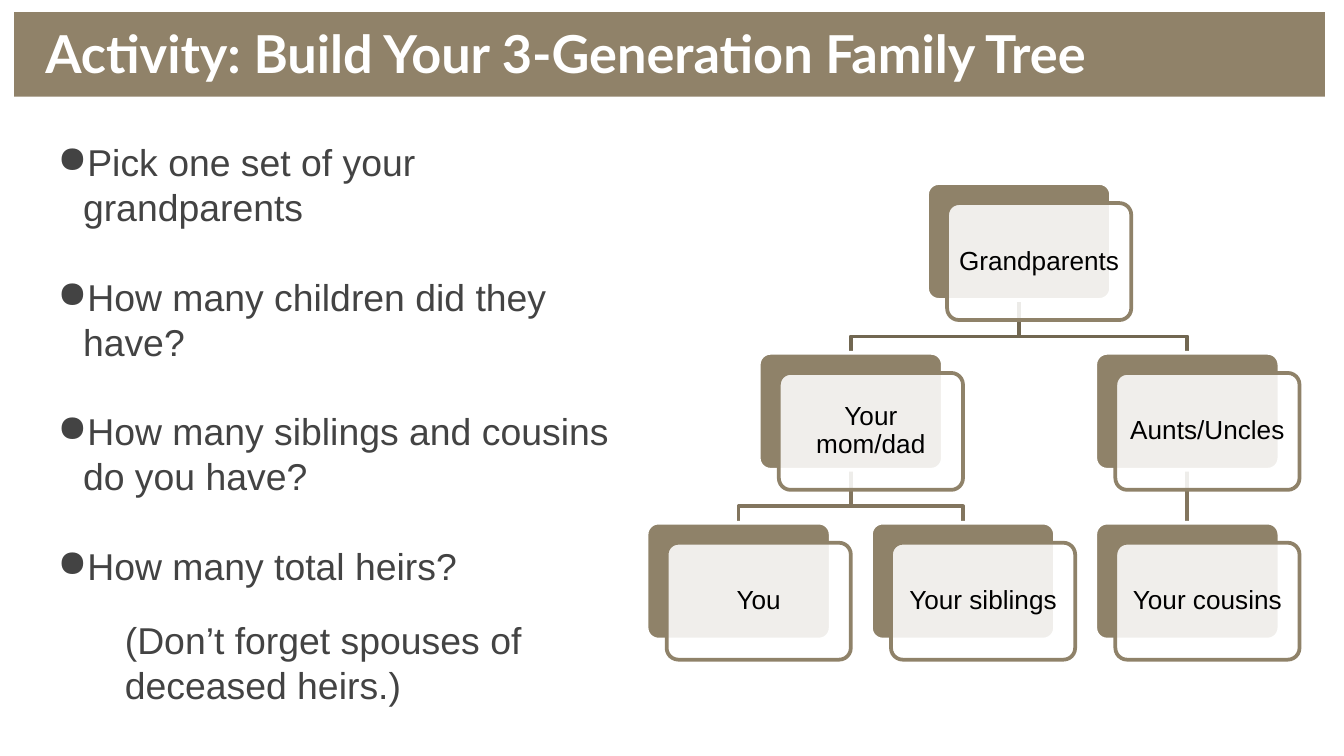
from pptx import Presentation
from pptx.dml.color import RGBColor
from pptx.enum.shapes import MSO_SHAPE as SHAPE
from pptx.enum.text import MSO_ANCHOR as ANCHOR, PP_ALIGN as ALIGN
from pptx.oxml.ns import qn
from pptx.util import Cm, Pt
from lxml.etree import SubElement

TAUPE = RGBColor(0x8F, 0x82, 0x69)
BANNER = RGBColor(0x90, 0x82, 0x69)
UPPER_BRANCH = RGBColor(0x71, 0x67, 0x51)
LOWER_BRANCH = RGBColor(0x82, 0x75, 0x5E)
WHITE = RGBColor(0xFF, 0xFF, 0xFF)
BLACK = RGBColor(0, 0, 0)
GREY = RGBColor(0x43, 0x43, 0x43)

CARD_W, CARD_H = 3.48, 2.21
COLUMN_STEP, ROW_STEP = 4.24, 3.21
TREE_LEFT, TREE_TOP = 12.22, 3.46
OFFSET = 0.38
BEND = 0.69


def set_font(paragraph, name, size, color, bold=False):
    font = paragraph.font
    font.name, font.size, font.bold = name, Pt(size), bold
    font.color.rgb = color


def add_card(left, top, fill, line):
    card = slide.shapes.add_shape(
        SHAPE.ROUNDED_RECTANGLE, Cm(left), Cm(top), Cm(CARD_W), Cm(CARD_H))
    card.adjustments[0] = 0.1
    card.shadow.inherit = False
    card.fill.solid()
    card.fill.fore_color.rgb = fill
    card.line.color.rgb = line
    card.line.width = Pt(2)
    return card


prs = Presentation()
prs.slide_width, prs.slide_height = Cm(25.4), Cm(14.29)
slide = prs.slides.add_slide(prs.slide_layouts[6])

banner = slide.shapes.add_shape(SHAPE.RECTANGLE, Cm(0.27), Cm(0.23), Cm(24.77), Cm(1.6))
banner.shadow.inherit = False
banner.fill.solid()
banner.fill.fore_color.rgb = BANNER
banner.line.fill.background()
title = banner.text_frame
title.vertical_anchor = ANCHOR.BOTTOM
title.margin_left = Cm(0.59)
title.margin_right = title.margin_top = title.margin_bottom = Cm(0.25)
heading = title.paragraphs[0]
heading.text = "Activity: Build Your 3-Generation Family Tree"
heading.alignment = ALIGN.LEFT
set_font(heading, "Lato", 28, WHITE, True)

questions = slide.shapes.add_textbox(Cm(0.84), Cm(2.39), Cm(11.38), Cm(10.67)).text_frame
questions.word_wrap = True
questions.margin_left = questions.margin_right = Cm(0.25)
questions.margin_top = questions.margin_bottom = Cm(0.25)
steps = [
    ("Pick one set of your grandparents", 0, 0),
    ("How many children did they have?", 0, 24),
    ("How many siblings and cousins do you have?", 0, 24),
    ("How many total heirs?", 0, 24),
    ("(Don’t forget spouses of deceased heirs.)", 1, 16),
]
for i, (wording, level, gap) in enumerate(steps):
    step = questions.add_paragraph() if i else questions.paragraphs[0]
    step.text = wording
    step.level = level
    step.line_spacing = Pt(24)
    step.space_before = Pt(gap)
    indents = step._p.get_or_add_pPr()
    indents.set("marL", str(Cm(1.27 if level else 0.48)))
    indents.set("indent", str(Cm(0 if level else -0.48)))
    if level == 0:
        bullet_color = SubElement(indents, qn("a:buClr"))
        SubElement(bullet_color, qn("a:srgbClr"), val=str(GREY))
        SubElement(indents, qn("a:buChar"), char="●")
    set_font(step, "Arial", 20, GREY)

relatives = {
    "Grandparents": (1.25, 0, None),
    "Your mom/dad": (0.5, 1, "Grandparents"),
    "You": (0, 2, "Your mom/dad"),
    "Your siblings": (1, 2, "Your mom/dad"),
    "Aunts/Uncles": (2, 1, "Grandparents"),
    "Your cousins": (2, 2, "Aunts/Uncles"),
}
corners = {name: (TREE_LEFT + column * COLUMN_STEP, TREE_TOP + row * ROW_STEP)
           for name, (column, row, parent) in relatives.items()}

for name, (column, row, parent) in relatives.items():
    if parent is None:
        continue
    child_x, child_y = corners[name][0] + CARD_W / 2, corners[name][1]
    parent_x, parent_y = corners[parent][0] + CARD_W / 2, corners[parent][1] + CARD_H
    route = [(parent_x, parent_y + BEND), (child_x, parent_y + BEND), (child_x, child_y)]
    if child_x == parent_x:
        route = route[-1:]
    builder = slide.shapes.build_freeform(Cm(parent_x), Cm(parent_y))
    builder.add_line_segments([(Cm(x), Cm(y)) for x, y in route], close=False)
    branch = builder.convert_to_shape()
    branch.shadow.inherit = False
    branch.fill.background()
    branch.line.color.rgb = UPPER_BRANCH if row == 1 else LOWER_BRANCH
    branch.line.width = Pt(2)

for name, (left, top) in corners.items():
    add_card(left, top, TAUPE, WHITE)
    front = add_card(left + OFFSET, top + OFFSET, WHITE, TAUPE)
    tint = front.fill._xPr.find(qn("a:solidFill"))[0]
    SubElement(tint, qn("a:alpha"), val="87000")
    label = front.text_frame
    label.word_wrap = True
    label.vertical_anchor = ANCHOR.MIDDLE
    label.margin_left = label.margin_right = Cm(0.14)
    label.margin_top = label.margin_bottom = Cm(0.14)
    relative = label.paragraphs[0]
    relative.text = name
    relative.alignment = ALIGN.CENTER
    relative.line_spacing = 0.9
    set_font(relative, "Arial", 14, BLACK)

prs.save("out.pptx")
